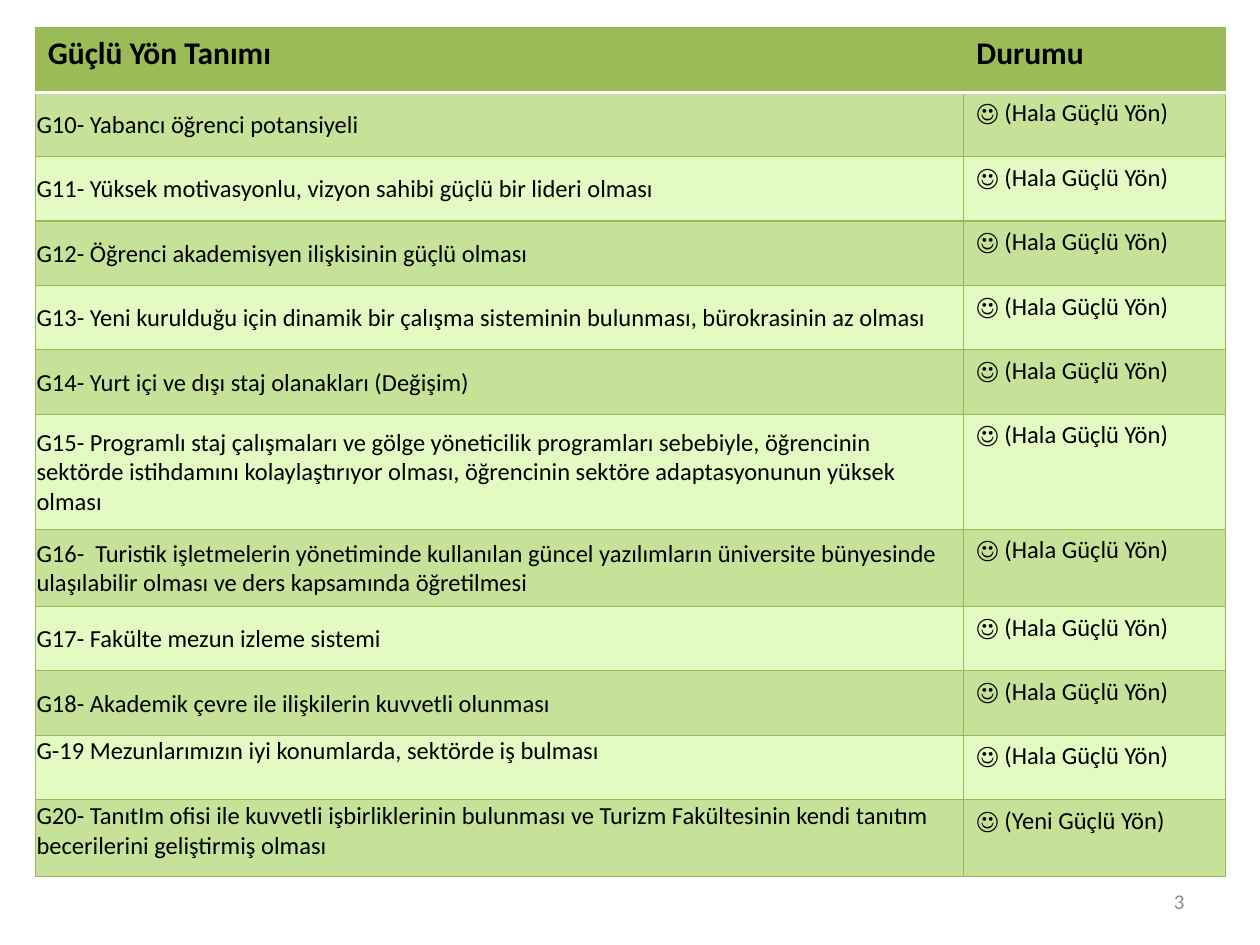
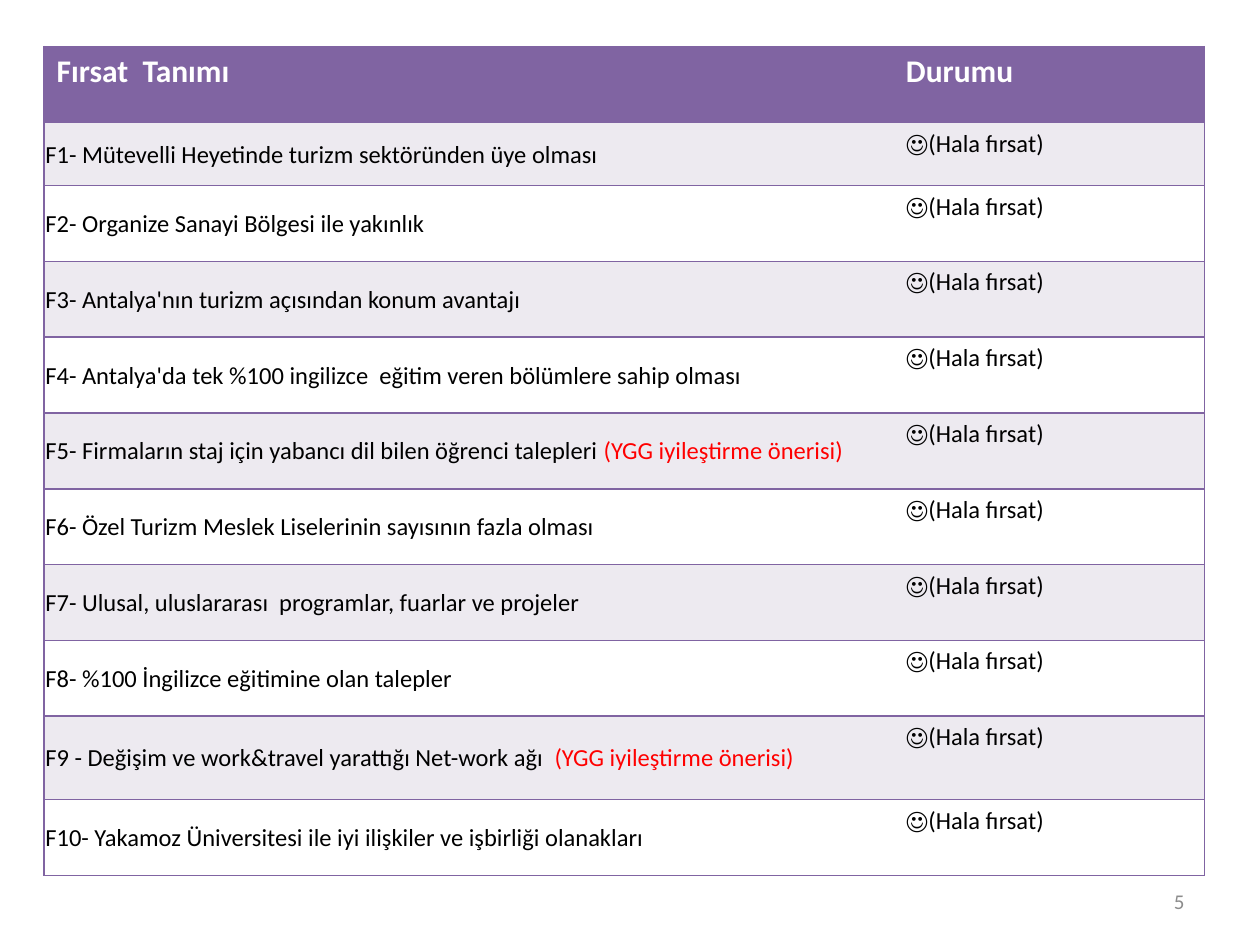
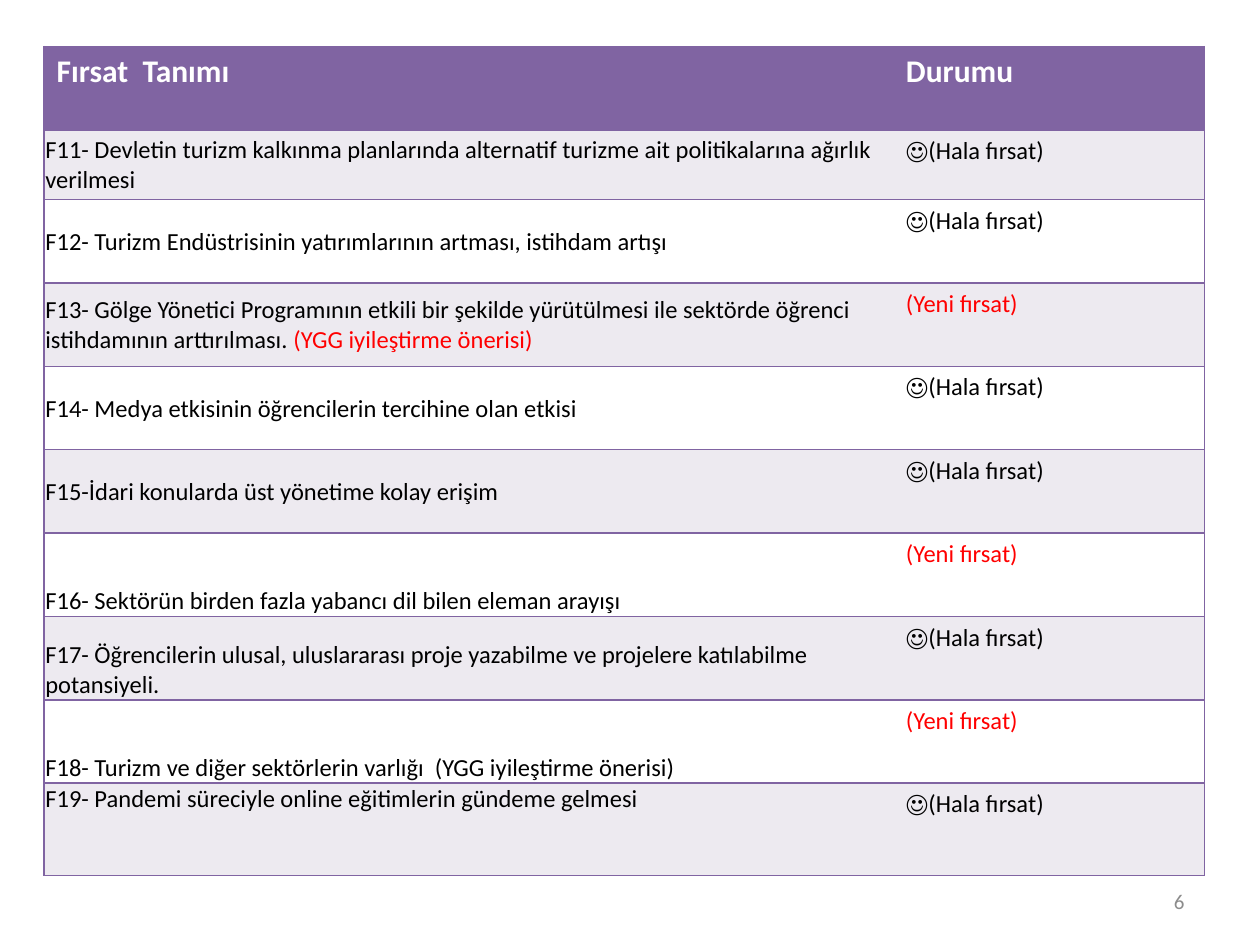
import pptx
import pptx.util
import pptx.dml.color
import pptx.enum.text
import pptx.oxml.ns
from dataclasses import dataclass
from lxml import etree

Inches = pptx.util.Inches
Pt = pptx.util.Pt
MSO_ANCHOR = pptx.enum.text.MSO_ANCHOR
PP_ALIGN = pptx.enum.text.PP_ALIGN


@dataclass(frozen=True)
class Theme:
    font: str = "Calibri"
    black: str = "000000"
    white: str = "FFFFFF"
    red: str = "FF0000"
    gray: str = "8C8C8C"
    header_size: int = 18
    body_size: int = 14
    number_size: int = 12


@dataclass(frozen=True)
class TableLook:
    header: str
    header_text: str
    bands: tuple
    line: str
    line_width: float
    header_rule: tuple
    inner_vertical: bool


THEME = Theme()
GREEN = TableLook("9BBB59", THEME.black, ("C6E198", "E3FBC2"),
                  "98B955", 0.75, (THEME.white, 2), True)
PURPLE = TableLook("8064A2", THEME.white, ("EDEAF0", THEME.white),
                   "8064A2", 1, ("8064A2", 1), False)
ANCHORS = {"t": MSO_ANCHOR.TOP, "m": MSO_ANCHOR.MIDDLE, "b": MSO_ANCHOR.BOTTOM}


def rgb(color):
    return pptx.dml.color.RGBColor.from_string(color)


def add_run(p, text, *, size, color=THEME.black, bold=False):
    r = p.add_run()
    r.text = text
    r.font.name = THEME.font
    r.font.size = Pt(size)
    r.font.bold = bold
    r.font.color.rgb = rgb(color)


def set_border(cell, side, line):
    """Draw one cell edge from (colour, points), or hide it when line is None."""
    color, width = line or (None, 0)
    qn = pptx.oxml.ns.qn
    ln = etree.Element(qn(f"a:ln{side}"), w=str(int(Pt(width))))
    if color:
        fill = etree.SubElement(ln, qn("a:solidFill"))
        etree.SubElement(fill, qn("a:srgbClr"), val=color)
    else:
        etree.SubElement(ln, qn("a:noFill"))
    # Edges come before the fill, in the order L, R, T, B
    cell._tc.get_or_add_tcPr().insert("LRTB".index(side), ln)


class Deck:
    def __init__(self):
        self.prs = pptx.Presentation()
        self.prs.slide_width = Inches(10)
        self.prs.slide_height = Inches(7.5)
        self.slide = None

    def new_slide(self, number):
        self.slide = self.prs.slides.add_slide(self.prs.slide_layouts[6])
        self.page_number(number)

    def page_number(self, number):
        sp = self.slide.shapes.add_textbox(Inches(7.17), Inches(6.95),
                                           Inches(2.33), Inches(0.4))
        tf = sp.text_frame
        tf.word_wrap = True
        tf.vertical_anchor = MSO_ANCHOR.MIDDLE
        p = tf.paragraphs[0]
        p.alignment = PP_ALIGN.RIGHT
        add_run(p, str(number), size=THEME.number_size, color=THEME.gray)

    def cell(self, cell, runs, fill, *, anchor="t", tight=False, **fmt):
        """Fill a cell; runs is a list of (text, colour) pairs."""
        cell.fill.solid()
        cell.fill.fore_color.rgb = rgb(fill)
        cell.vertical_anchor = ANCHORS[anchor]
        if tight:
            cell.margin_left = cell.margin_top = cell.margin_right = Inches(0.01)
            cell.margin_bottom = 0
        p = cell.text_frame.paragraphs[0]
        for text, color in runs:
            add_run(p, text, color=color, **fmt)

    def borders(self, table, look):
        line = (look.line, look.line_width)
        middle = line if look.inner_vertical else None
        for i, row in enumerate(table.rows):
            top = look.header_rule if i == 1 else line
            bottom = look.header_rule if i == 0 else line
            for cell, left, right in zip(row.cells, (line, middle), (middle, line)):
                for side, edge in zip("LRTB", (left, right, top, bottom)):
                    set_border(cell, side, edge)

    def status_table(self, look, box, widths, heights, headers, items):
        """Two columns, description and status, under a header row."""
        left, top, width, height = map(Inches, box)
        table = self.slide.shapes.add_table(len(items) + 1, 2, left, top,
                                            width, height).table
        table.first_row = table.horz_banding = False
        for col, w in zip(table.columns, widths):
            col.width = Inches(w)
        # Rows share the full height in proportion
        for row, h in zip(table.rows, heights):
            row.height = int(height * h / sum(heights))

        for j, text in enumerate(headers):
            self.cell(table.cell(0, j), [(text, look.header_text)], look.header,
                      size=THEME.header_size, bold=True)
        for i, (text, status, anchor, *note) in enumerate(items, 1):
            fill = look.bands[(i - 1) % 2]
            runs = [(text, THEME.black)] + [(n, THEME.red) for n in note]
            self.cell(table.cell(i, 0), runs, fill, anchor=anchor, tight=True,
                      size=THEME.body_size)
            color = THEME.red if status == NEW_CHANCE else THEME.black
            self.cell(table.cell(i, 1), [(status, color)], fill,
                      size=THEME.body_size)
        self.borders(table, look)


# Status wording
STILL_STRONG = "☺ (Hala Güçlü Yön)"
NEW_STRONG = "☺ (Yeni Güçlü Yön)"
STILL_CHANCE = "☺(Hala fırsat)"
NEW_CHANCE = "(Yeni fırsat)"
SUGGESTION = "(YGG iyileştirme önerisi)"

# Items: description, status, vertical anchor, optional red note
STRENGTHS = [
    ("G10- Yabancı öğrenci potansiyeli", STILL_STRONG, "m"),
    ("G11- Yüksek motivasyonlu, vizyon sahibi güçlü bir lideri olması", STILL_STRONG, "m"),
    ("G12- Öğrenci akademisyen ilişkisinin güçlü olması", STILL_STRONG, "m"),
    ("G13- Yeni kurulduğu için dinamik bir çalışma sisteminin bulunması, "
     "bürokrasinin az olması", STILL_STRONG, "m"),
    ("G14- Yurt içi ve dışı staj olanakları (Değişim)", STILL_STRONG, "m"),
    ("G15- Programlı staj çalışmaları ve gölge yöneticilik programları sebebiyle, "
     "öğrencinin sektörde istihdamını kolaylaştırıyor olması, öğrencinin sektöre "
     "adaptasyonunun yüksek olması", STILL_STRONG, "m"),
    ("G16-  Turistik işletmelerin yönetiminde kullanılan güncel yazılımların "
     "üniversite bünyesinde ulaşılabilir olması ve ders kapsamında öğretilmesi",
     STILL_STRONG, "m"),
    ("G17- Fakülte mezun izleme sistemi", STILL_STRONG, "m"),
    ("G18- Akademik çevre ile ilişkilerin kuvvetli olunması", STILL_STRONG, "m"),
    ("G-19 Mezunlarımızın iyi konumlarda, sektörde iş bulması", STILL_STRONG, "t"),
    ("G20- TanıtIm ofisi ile kuvvetli işbirliklerinin bulunması ve Turizm "
     "Fakültesinin kendi tanıtım becerilerini geliştirmiş olması", NEW_STRONG, "t"),
]
CHANCES_1 = [
    ("F1- Mütevelli Heyetinde turizm sektöründen üye olması", STILL_CHANCE, "m"),
    ("F2- Organize Sanayi Bölgesi ile yakınlık", STILL_CHANCE, "m"),
    ("F3- Antalya'nın turizm açısından konum avantajı", STILL_CHANCE, "m"),
    ("F4- Antalya'da tek %100 ingilizce  eğitim veren bölümlere sahip olması",
     STILL_CHANCE, "m"),
    ("F5- Firmaların staj için yabancı dil bilen öğrenci talepleri ",
     STILL_CHANCE, "m", SUGGESTION),
    ("F6- Özel Turizm Meslek Liselerinin sayısının fazla olması", STILL_CHANCE, "m"),
    ("F7- Ulusal, uluslararası  programlar, fuarlar ve projeler", STILL_CHANCE, "m"),
    ("F8- %100 İngilizce eğitimine olan talepler", STILL_CHANCE, "m"),
    ("F9 - Değişim ve work&travel yarattığı Net-work ağı  ",
     STILL_CHANCE, "m", SUGGESTION),
    ("F10- Yakamoz Üniversitesi ile iyi ilişkiler ve işbirliği olanakları",
     STILL_CHANCE, "m"),
]
CHANCES_2 = [
    ("F11- Devletin turizm kalkınma planlarında alternatif turizme ait "
     "politikalarına ağırlık verilmesi", STILL_CHANCE, "m"),
    ("F12- Turizm Endüstrisinin yatırımlarının artması, istihdam artışı",
     STILL_CHANCE, "m"),
    ("F13- Gölge Yönetici Programının etkili bir şekilde yürütülmesi ile sektörde "
     "öğrenci istihdamının arttırılması. ", NEW_CHANCE, "m", SUGGESTION),
    ("F14- Medya etkisinin öğrencilerin tercihine olan etkisi", STILL_CHANCE, "m"),
    ("F15-İdari konularda üst yönetime kolay erişim", STILL_CHANCE, "m"),
    ("F16- Sektörün birden fazla yabancı dil bilen eleman arayışı", NEW_CHANCE, "b"),
    ("F17- Öğrencilerin ulusal, uluslararası proje yazabilme ve projelere "
     "katılabilme potansiyeli.", STILL_CHANCE, "b"),
    ("F18- Turizm ve diğer sektörlerin varlığı  " + SUGGESTION, NEW_CHANCE, "b"),
    ("F19- Pandemi süreciyle online eğitimlerin gündeme gelmesi", STILL_CHANCE, "t"),
]


def main():
    deck = Deck()

    # Strengths
    deck.new_slide(3)
    deck.status_table(GREEN, (0.28, 0.22, 9.45, 6.74), (7.37, 2.08),
                      [0.51] * 6 + [0.91, 0.61] + [0.51] * 3 + [0.61],
                      ("Güçlü Yön Tanımı", "Durumu"), STRENGTHS)

    # Opportunities, over two slides
    chance_pages = [
        (5, [0.6, 0.5] + [0.6] * 7 + [0.66, 0.6], CHANCES_1),
        (6, [0.66, 0.55] + [0.66] * 7 + [0.73], CHANCES_2),
    ]
    for number, heights, items in chance_pages:
        deck.new_slide(number)
        deck.status_table(PURPLE, (0.35, 0.37, 9.21, 6.58), (6.74, 2.47), heights,
                          ("Fırsat  Tanımı", "Durumu"), items)

    deck.prs.save("out.pptx")


if __name__ == "__main__":
    main()
